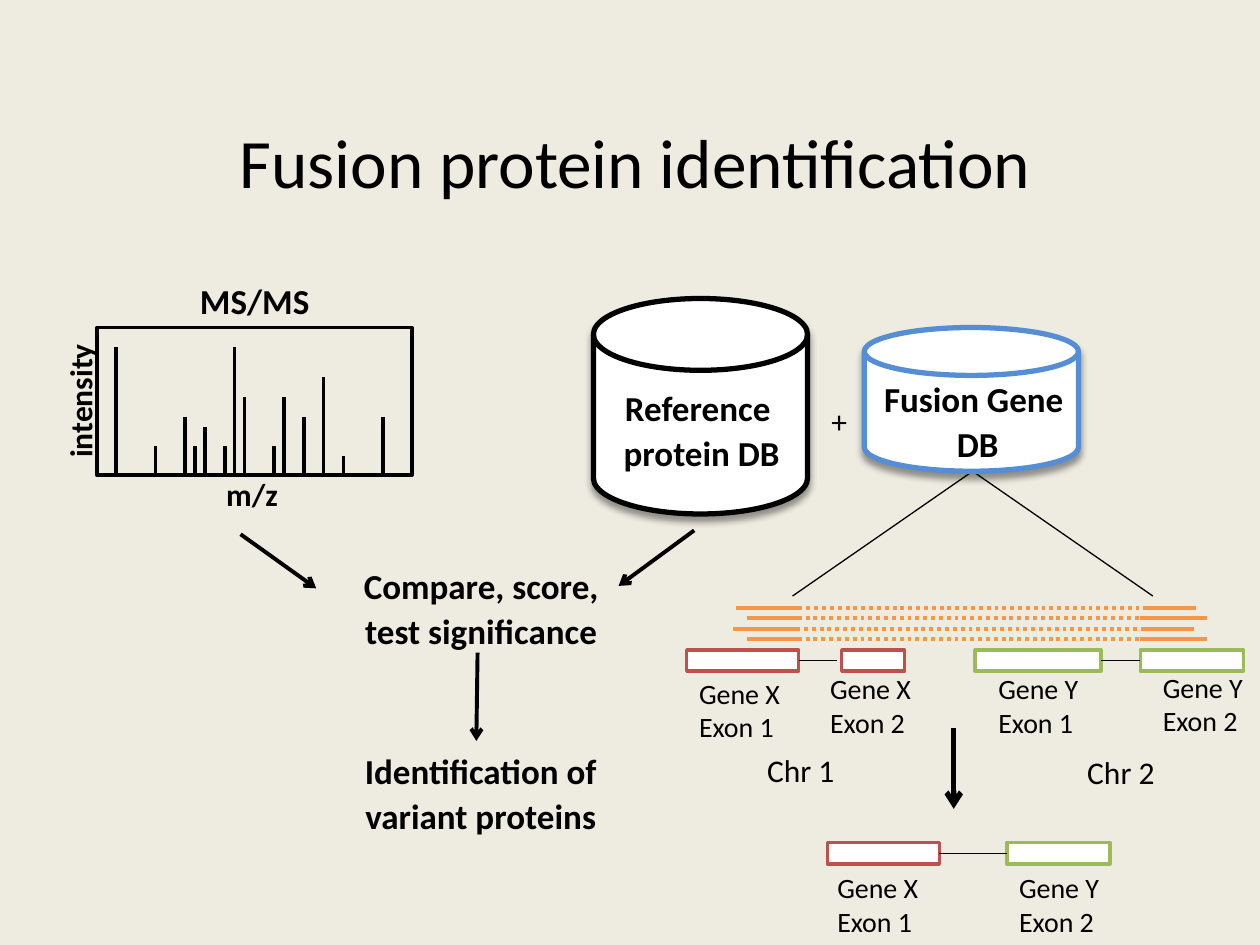
from lxml import etree
from pptx import Presentation
from pptx.dml.color import RGBColor
from pptx.enum.dml import MSO_LINE as Dash
from pptx.enum.shapes import MSO_CONNECTOR as Conn, MSO_SHAPE as Shape
from pptx.enum.text import MSO_ANCHOR as Anchor, MSO_AUTO_SIZE as Fit, PP_ALIGN as Align
from pptx.oxml import parse_xml
from pptx.oxml.ns import qn
from pptx.util import Pt

BLACK, WHITE, RED, GREEN = "000000", "FFFFFF", "C0504D", "9BBB59"
BLUE, ORANGE, PAPER = "558ED5", "F79646", "EEECE1"
TOP, LEFT, BOTTOM, RIGHT = range(4)

SHADOW = (
    '<a:effectLst xmlns:a="http://schemas.openxmlformats.org/drawingml/2006/main">'
    '<a:outerShdw blurRad="50800" dist="38100" dir="5400000" rotWithShape="0">'
    '<a:srgbClr val="000000"><a:alpha val="40000"/></a:srgbClr>'
    '</a:outerShdw></a:effectLst>'
)


def color(code):
    return RGBColor.from_string(code)


def add_text(slide, box, lines, size, bold=False, align=Align.CENTER,
             wrap=False, lead=None, turn=0):
    """Add a text box with one paragraph for each line."""
    item = slide.shapes.add_textbox(*map(Pt, box))
    item.rotation = turn
    frame = item.text_frame
    frame.word_wrap = wrap
    frame.auto_size = Fit.SHAPE_TO_FIT_TEXT
    for i, line in enumerate(lines):
        para = frame.add_paragraph() if i else frame.paragraphs[0]
        para.alignment = align
        if lead:
            para.line_spacing = Pt(lead)
        run = para.add_run()
        run.text = line
        font = run.font
        font.name, font.size, font.bold = "Calibri", Pt(size), bold
        font.color.rgb = color(BLACK)
    return item


def add_title(slide, text):
    item = add_text(slide, (39, 36, 648, 111.6), [text], 39.6, wrap=True)
    item.text_frame.auto_size = Fit.NONE
    item.text_frame.vertical_anchor = Anchor.MIDDLE


def add_head(slide, x, y, w, lines):
    """Add a bold label with fixed line spacing."""
    add_text(slide, (x, y, w, 59), lines, 20, True, wrap=True, lead=26)


def add_form(slide, kind, box, edge, width, fill=WHITE):
    item = slide.shapes.add_shape(kind, *map(Pt, box))
    item.shadow.inherit = False
    if fill:
        item.fill.solid()
        item.fill.fore_color.rgb = color(fill)
    else:
        item.fill.background()
    item.line.color.rgb = color(edge)
    item.line.width = Pt(width)
    return item


def add_disk(slide, box, edge):
    """Add a database cylinder with a soft shadow."""
    item = add_form(slide, Shape.FLOWCHART_MAGNETIC_DISK, box, edge, 3)
    props = item.element.spPr
    props.replace(props.find(qn("a:effectLst")), parse_xml(SHADOW))


def add_line(slide, ends, width, tint=BLACK, dash=None, arrow=False):
    item = slide.shapes.add_connector(Conn.STRAIGHT, *map(Pt, ends))
    item.line.color.rgb = color(tint)
    item.line.width = Pt(width)
    if dash:
        item.line.dash_style = dash
    if arrow:
        etree.SubElement(item.line._get_or_add_ln(), qn("a:tailEnd"), type="arrow")
    etree.SubElement(item.element.spPr, qn("a:effectLst"))
    return item


def add_exon(slide, x, y, w, edge):
    return add_form(slide, Shape.RECTANGLE, (x, y, w, 12.2), edge, 2)


def add_name(slide, x, y, gene, exon):
    add_text(slide, (x, y, 61, 46), [f"Gene {gene}", f"Exon {exon}"], 16,
             align=Align.LEFT)


def join(slide, a, b):
    """Link the right side of exon a to the left side of exon b."""
    line = add_line(slide, (0, 0, 9, 9), 0.75)
    line.begin_connect(a, RIGHT)
    line.end_connect(b, LEFT)


def add_peaks(slide):
    """Draw the spectrum; peak places and heights are in grid units."""
    unit, x0, base = 5.65, 66.3, 272
    add_form(slide, Shape.RECTANGLE, (55.4, 187.2, 180, 84.4), BLACK, 2, None)
    peaks = {0: 13, 4: 3, 7: 6, 8: 3, 9: 5, 11: 3, 12: 13, 13: 8,
             16: 3, 17: 8, 19: 6, 21: 10, 23: 2, 27: 6}
    for place, high in peaks.items():
        x = x0 + place * unit
        add_line(slide, (x, base - high * unit, x, base), 2)
    add_text(slide, (121.7, 267.8, 44.6, 29), ["m/z"], 18, True)
    add_text(slide, (5.8, 214.6, 80, 29), ["intensity"], 18, True, turn=270)
    add_text(slide, (106.6, 156.2, 77.8, 31.5), ["MS/MS"], 20, True)


def add_reads(slide):
    """Draw paired reads: two solid ends over one dotted span."""
    late = ((421, 458.5), (654.5, 683.5), (420.5, 672.5))
    early = ((427, 456), (651.5, 689), (438, 690))
    for row in range(4):
        y = 347.2 + row * 6
        shift = -1.4 if row == 2 else 0
        head, tail, span = early if row % 2 else late
        for (a, b), dash in ((head, None), (tail, None), (span, Dash.ROUND_DOT)):
            add_line(slide, (a + shift, y, b + shift, y), 2.25, ORANGE, dash)


def add_genes(slide):
    y = 371.4
    first = add_exon(slide, 392.4, y, 64, RED)
    add_exon(slide, 481, y, 36, RED)
    third = add_exon(slide, 557.3, y, 72, GREEN)
    fourth = add_exon(slide, 651.6, y, 59, GREEN)
    stub = add_line(slide, (456.4, 377.5, 478.1, 377.5), 0.75)
    stub.begin_connect(first, RIGHT)
    join(slide, third, fourth)

    left = add_exon(slide, 472.8, 481.5, 64, RED)
    right = add_exon(slide, 575.3, 481.5, 59, GREEN)
    join(slide, left, right)

    for x, y, gene, exon in (
        (392.4, 383, "X", 1), (467.3, 380.2, "X", 2),
        (563.4, 380.2, "Y", 1), (657.4, 379.4, "Y", 2),
        (471.4, 494, "X", 1), (575.3, 494, "Y", 2),
    ):
        add_name(slide, x, y, gene, exon)
    for x, y, name in ((431.3, 425.5, "Chr 1"), (614.2, 426.5, "Chr 2")):
        add_text(slide, (x, y, 53.3, 29), [name], 18, align=Align.LEFT)


def main():
    deck = Presentation()
    deck.slide_width, deck.slide_height = Pt(720), Pt(540)
    slide = deck.slides.add_slide(deck.slide_layouts[6])
    slide.background.fill.solid()
    slide.background.fill.fore_color.rgb = color(PAPER)

    add_title(slide, "Fusion protein identification")
    add_peaks(slide)

    for x in (452.9, 658.8):
        add_line(slide, (x, 340.6, 555.8, 269.3), 0.75)
    add_disk(slide, (339.1, 170.6, 122.4, 123.1), BLACK)
    add_disk(slide, (493.9, 187.2, 122.4, 82.1), BLUE)
    add_head(slide, 312.5, 215.3, 177, ["Reference ", "protein DB"])
    add_head(slide, 468, 210, 177, ["Fusion Gene", " DB"])
    add_text(slide, (468, 226, 23.8, 29), ["+"], 18, align=Align.LEFT)

    add_head(slide, 186.5, 316.8, 177, ["Compare, score, test significance"])
    add_head(slide, 180, 422.6, 189.4, ["Identification of variant proteins"])
    for ends, width in (
        ((137.5, 305.3, 180.7, 336.2), 2.25),
        ((396.7, 303.1, 353.5, 334.8), 2.25),
        ((272.9, 373, 272.2, 423.4), 2.25),
        ((545, 416.2, 545, 462.2), 3),
    ):
        add_line(slide, ends, width, arrow=True)

    add_reads(slide)
    add_genes(slide)
    deck.save("out.pptx")


if __name__ == "__main__":
    main()
